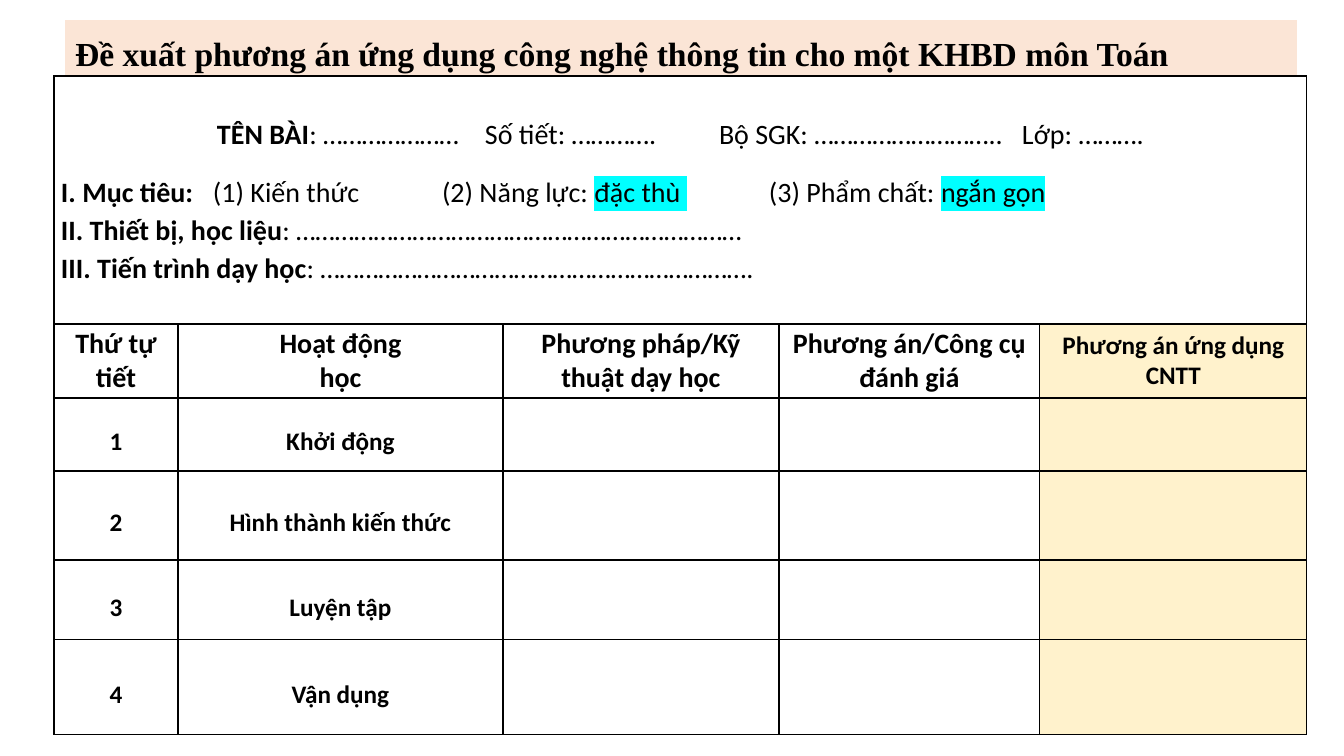
from lxml import etree
from pptx import Presentation, util as u
from pptx.dml.color import RGBColor
from pptx.enum import text
from pptx.oxml.ns import qn

EMU_PER_PX = 12192000 / 1344
BLACK = RGBColor(0, 0, 0)
WHITE = RGBColor(255, 255, 255)
PEACH = RGBColor(0xFB, 0xE5, 0xD6)
CREAM = RGBColor(0xFF, 0xF2, 0xCC)
CYAN = RGBColor(0, 255, 255)
CENTER = text.PP_ALIGN.CENTER
LEFT = text.PP_ALIGN.LEFT

TITLE = "Đề xuất phương án ứng dụng công nghệ thông tin cho một KHBD môn Toán"
COLUMN_WIDTHS = [124, 325, 276, 261, 267]
ROW_HEIGHTS = [248, 74, 73, 89, 80, 95]
HEADERS = [
    ["Thứ tự tiết"],
    ["Hoạt động", "học"],
    ["Phương pháp/Kỹ thuật dạy học"],
    ["Phương án/Công cụ đánh giá"],
    ["Phương án ứng dụng CNTT"],
]
ACTIVITIES = ["Khởi động", "Hình thành kiến thức", "Luyện tập", "Vận dụng"]
OUTLINE = [
    ([156, 424, 658, 961], 0, [
        ("\tTÊN BÀI", True, None),
        (": …………………\tSố tiết: ………….\tBộ SGK: ………………………..\tLớp: ……….", False, None),
    ]),
    ([152, 381, 708], 15, [
        ("I. Mục tiêu:", True, None),
        ("\t(1) Kiến thức\t(2) Năng lực: ", False, None),
        ("đặc thù ", False, CYAN),
        ("\t(3) Phẩm chất: ", False, None),
        ("ngắn gọn", False, CYAN),
    ]),
    ([], 0, [
        ("II. Thiết bị, học liệu", True, None),
        (": ……………………………………………………………", False, None),
    ]),
    ([], 0, [
        ("III. Tiến trình dạy học", True, None),
        (": ………………………………………………………….", False, None),
    ]),
]


def px(length):
    return u.Emu(round(length * EMU_PER_PX))


def set_all(target, values):
    for name, value in values.items():
        setattr(target, name, value)


def add_run(paragraph, words, size, bold=True, highlight=None, font="Calibri"):
    run = paragraph.add_run()
    run.text = words
    set_all(run.font, {"name": font, "size": u.Pt(size), "bold": bold})
    run.font.color.rgb = BLACK
    if highlight is not None:
        mark = etree.Element(qn("a:highlight"))
        etree.SubElement(mark, qn("a:srgbClr"), val=str(highlight))
        run.font._element.find(qn("a:solidFill")).addnext(mark)


def add_tabs(paragraph, stops):
    tabs = etree.SubElement(paragraph._p.get_or_add_pPr(), qn("a:tabLst"))
    for stop in stops:
        etree.SubElement(tabs, qn("a:tab"), pos=str(px(stop)), algn="l")


def next_paragraph(frame, index):
    return frame.add_paragraph() if index else frame.paragraphs[0]


def format_cell(cell, color):
    properties = cell._tc.get_or_add_tcPr()
    for side in ("a:lnL", "a:lnR", "a:lnT", "a:lnB"):
        line = etree.SubElement(properties, qn(side), w=str(u.Pt(1)))
        fill = etree.SubElement(line, qn("a:solidFill"))
        etree.SubElement(fill, qn("a:srgbClr"), val=str(BLACK))
    cell.fill.solid()
    cell.fill.fore_color.rgb = color
    set_all(cell, {
        "vertical_anchor": text.MSO_ANCHOR.MIDDLE,
        "margin_left": px(7), "margin_right": px(7),
        "margin_top": 0, "margin_bottom": 0,
    })


def write_cell(cell, lines, size, spacing):
    for index, words in enumerate(lines):
        paragraph = next_paragraph(cell.text_frame, index)
        set_all(paragraph, {"alignment": CENTER, **spacing})
        add_run(paragraph, words, size)


def write_outline(cell):
    for index, (stops, before, runs) in enumerate(OUTLINE):
        paragraph = next_paragraph(cell.text_frame, index)
        set_all(paragraph, {"alignment": LEFT, "line_spacing": 1.1})
        if before:
            paragraph.space_before = u.Pt(before)
        if stops:
            add_tabs(paragraph, stops)
        for words, bold, highlight in runs:
            add_run(paragraph, words, 20, bold, highlight)


def add_title(slide, left, top, width, height):
    title = slide.shapes.title
    set_all(title, {"left": px(left), "top": px(top),
                    "width": px(width), "height": px(height)})
    title.fill.solid()
    title.fill.fore_color.rgb = PEACH
    set_all(title.text_frame, {
        "word_wrap": True,
        "auto_size": text.MSO_AUTO_SIZE.SHAPE_TO_FIT_TEXT,
        "vertical_anchor": text.MSO_ANCHOR.TOP,
    })
    paragraph = title.text_frame.paragraphs[0]
    set_all(paragraph, {"alignment": text.PP_ALIGN.JUSTIFY,
                        "line_spacing": 1.2, "space_before": u.Pt(0)})
    add_run(paragraph, TITLE, 24, font="Times New Roman")


def add_lesson_table(slide, left, top):
    frame = slide.shapes.add_table(
        len(ROW_HEIGHTS), len(COLUMN_WIDTHS), px(left), px(top),
        px(sum(COLUMN_WIDTHS)), px(sum(ROW_HEIGHTS)))
    table = frame.table
    set_all(table, {"first_row": False, "horz_banding": False})
    for column, width in zip(table.columns, COLUMN_WIDTHS):
        column.width = px(width)
    last = len(COLUMN_WIDTHS) - 1
    for row_index, height in enumerate(ROW_HEIGHTS):
        table.rows[row_index].height = px(height)
        for column_index in range(last + 1):
            color = CREAM if row_index and column_index == last else WHITE
            format_cell(table.cell(row_index, column_index), color)
    table.cell(0, 0).merge(table.cell(0, last))
    write_outline(table.cell(0, 0))
    for index, lines in enumerate(HEADERS):
        write_cell(table.cell(1, index), lines, 18 if index == last else 20, {})
    spacing = {"line_spacing": 1.5, "space_after": u.Pt(6)}
    for number, activity in enumerate(ACTIVITIES, 1):
        for index, words in enumerate([str(number), activity]):
            write_cell(table.cell(number + 1, index), [words], 18, spacing)


def main():
    presentation = Presentation()
    set_all(presentation, {"slide_width": px(1344), "slide_height": px(756)})
    slide = presentation.slides.add_slide(presentation.slide_layouts[5])
    add_title(slide, 65, 20, 1232, 55)
    add_lesson_table(slide, 54, 76)
    presentation.save("out.pptx")


if __name__ == "__main__":
    main()
